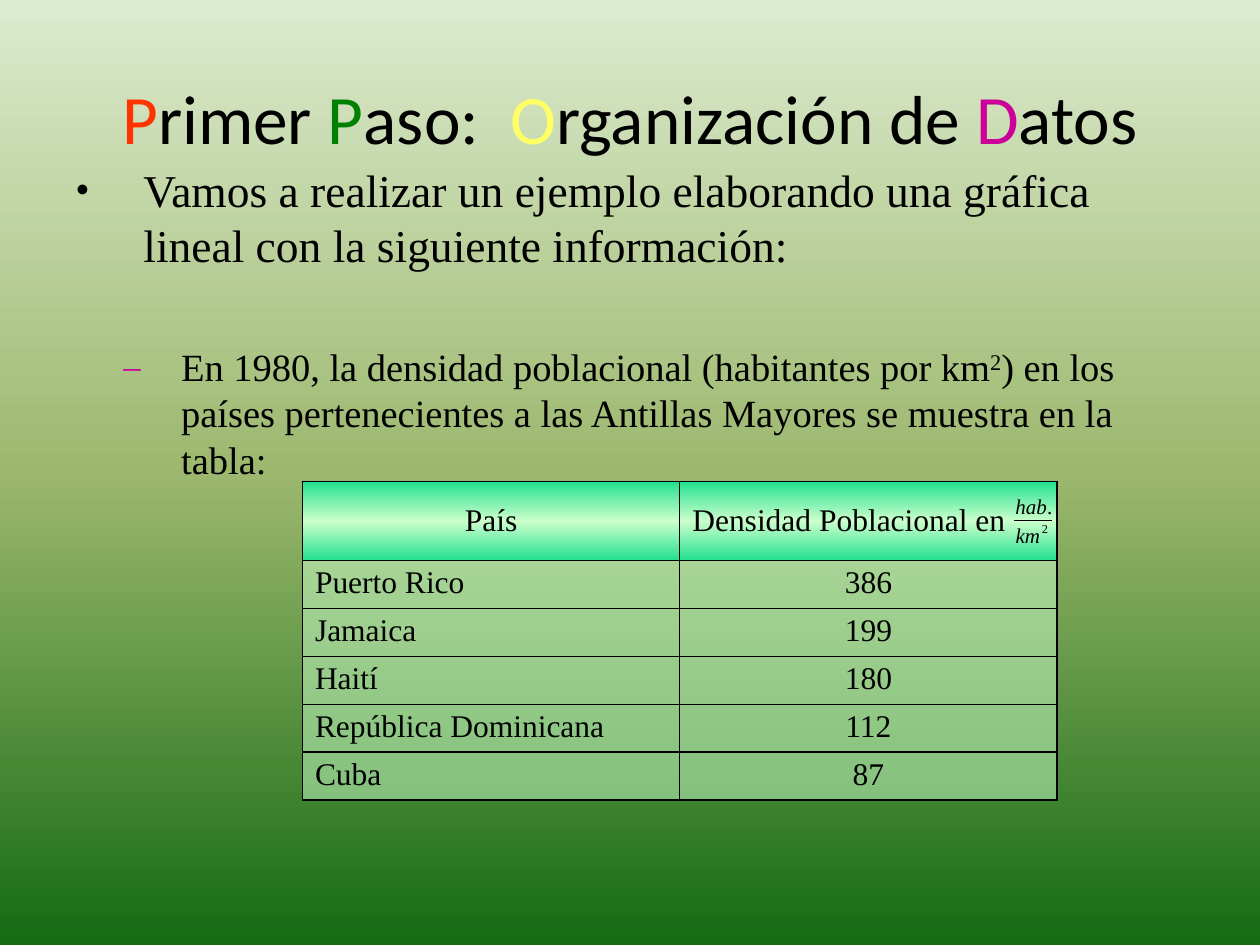
import pptx
import pptx.dml.color
import pptx.enum.shapes
import pptx.enum.text
import pptx.oxml
import pptx.oxml.ns
import pptx.util

COLORS = {
    "text": "000000", "red": "FF3300", "green": "008000", "yellow": "FFFF66",
    "magenta": "CC0099", "sky": "DDEBCF", "meadow": "9CB86E", "forest": "156B13",
    "header": "22E08F", "mint": "CCFFCC",
}
COLUMNS, ROWS = 100, 75
ALIGN = pptx.enum.text.PP_ALIGN
ANCHOR = pptx.enum.text.MSO_ANCHOR
BACKGROUND = [(0, "sky"), (50, "meadow"), (100, "forest")]
HEADER_FILL = [(0, "header"), (50, "mint"), (100, "header")]


def element(xml):
    """Parse one DrawingML element written without its namespace."""
    return pptx.oxml.parse_xml(f'<a:root {pptx.oxml.ns.nsdecls("a")}>{xml}</a:root>')[0]


def solid(color, alpha=100):
    return (f'<a:solidFill><a:srgbClr val="{COLORS[color]}">'
            f'<a:alpha val="{alpha * 1000}"/></a:srgbClr></a:solidFill>')


def vertical_gradient(stops):
    marks = "".join(f'<a:gs pos="{position * 1000}"><a:srgbClr val="{COLORS[color]}"/></a:gs>'
                    for position, color in stops)
    return (f'<a:gradFill rotWithShape="1"><a:gsLst>{marks}</a:gsLst>'
            '<a:lin ang="5400000" scaled="0"/></a:gradFill>')


def add_text(paragraph, text, size=18, color="text", font="Times New Roman",
             italic=False, baseline=0):
    run = paragraph.add_run()
    run.text = text
    run.font.name = font
    run.font.size = pptx.util.Pt(size)
    run.font.italic = italic
    run.font.color.rgb = pptx.dml.color.RGBColor.from_string(COLORS[color])
    if baseline:
        run.font._element.set("baseline", str(baseline * 1000))


def add_bullet(paragraph, mark, color, margin, hanging):
    """Indent the paragraph, in inches, and hang a bullet before it."""
    properties = paragraph._p.get_or_add_pPr()
    properties.set("marL", str(pptx.util.Inches(margin)))
    properties.set("indent", str(-pptx.util.Inches(hanging)))
    for xml in (f'<a:buClr><a:srgbClr val="{COLORS[color]}"/></a:buClr>',
                '<a:buSzPct val="90000"/>',
                '<a:buFont typeface="Times New Roman"/>',
                f'<a:buChar char="{mark}"/>'):
        properties.append(element(xml))


class SlideBuilder:
    """Draws on one slide; places are columns and rows of a 100 by 75 grid."""

    def __init__(self, presentation):
        self.width, self.height = presentation.slide_width, presentation.slide_height
        self.slide = presentation.slides.add_slide(presentation.slide_layouts[6])

    def place(self, column, row):
        return round(self.width * column / COLUMNS), round(self.height * row / ROWS)

    def background(self, stops):
        self.slide.background.fill.solid()
        properties = self.slide.background._cSld.bg.bgPr
        properties.replace(properties[0], element(vertical_gradient(stops)))

    def text_box(self, column, row, columns, rows, anchor=ANCHOR.TOP):
        shape = self.slide.shapes.add_textbox(*self.place(column, row), *self.place(columns, rows))
        frame = shape.text_frame
        frame.word_wrap = True
        frame.vertical_anchor = anchor
        return frame

    def label(self, column, row, columns, rows, text, **style):
        """Tight one-line text without margins."""
        frame = self.text_box(column, row, columns, rows)
        frame.word_wrap = False
        frame.margin_left = frame.margin_right = frame.margin_top = frame.margin_bottom = 0
        add_text(frame.paragraphs[0], text, **style)

    def line(self, start, end, width):
        connector = self.slide.shapes.add_connector(
            pptx.enum.shapes.MSO_CONNECTOR.STRAIGHT, *self.place(*start), *self.place(*end))
        connector.line.width = pptx.util.Pt(width)
        connector.line.color.rgb = pptx.dml.color.RGBColor.from_string(COLORS["text"])
        connector._element.spPr.append(element("<a:effectLst/>"))

    def cell(self, cell, text, fill, align, anchor=ANCHOR.TOP):
        cell.margin_top = cell.margin_bottom = pptx.util.Inches(0.04)
        cell.vertical_anchor = anchor
        paragraph = cell.text_frame.paragraphs[0]
        paragraph.alignment = align
        add_text(paragraph, text)
        properties = cell._tc.get_or_add_tcPr()
        for side in "LRTB":
            properties.append(element(f'<a:ln{side} w="12700">{solid("text")}</a:ln{side}>'))
        properties.append(element(fill))

    def table(self, column, row, columns, header, records, header_rows, record_rows):
        total_rows = header_rows + record_rows * len(records)
        table = self.slide.shapes.add_table(
            len(records) + 1, len(header), *self.place(column, row),
            *self.place(columns, total_rows)).table
        table.first_row = table.horz_banding = False
        for index, table_row in enumerate(table.rows):
            table_row.height = self.place(0, record_rows if index else header_rows)[1]
        for index, (text, align) in enumerate(zip(header, (ALIGN.CENTER, ALIGN.LEFT))):
            self.cell(table.cell(0, index), text, vertical_gradient(HEADER_FILL),
                      align, ANCHOR.MIDDLE)
        for number, record in enumerate(records, 1):
            for index, (text, align) in enumerate(zip(record, (ALIGN.LEFT, ALIGN.CENTER))):
                self.cell(table.cell(number, index), text, solid("mint", 50), align)


def main():
    presentation = pptx.Presentation()
    presentation.slide_width = pptx.util.Inches(10)
    presentation.slide_height = pptx.util.Inches(7.5)
    builder = SlideBuilder(presentation)
    builder.background(BACKGROUND)

    title = builder.text_box(5, 3, 90, 12.5, ANCHOR.MIDDLE).paragraphs[0]
    title.alignment = ALIGN.CENTER
    for text, color in [("P", "red"), ("rimer ", "text"), ("P", "green"), ("aso:  ", "text"),
                        ("O", "yellow"), ("rganización de ", "text"),
                        ("D", "magenta"), ("atos", "text")]:
        add_text(title, text, size=39.6, color=color, font="Calibri")

    body = builder.text_box(5, 12.4, 90.7, 26.7)
    task, detail = body.paragraphs[0], body.add_paragraph()
    detail.space_before = pptx.util.Pt(41)
    add_bullet(task, "•", "text", 0.54, 0.54)
    add_bullet(detail, "–", "magenta", 0.84, 0.46)
    add_text(task, "Vamos a realizar un ejemplo elaborando una gráfica lineal "
                   "con la siguiente información:", size=26)
    add_text(detail, "En 1980, la densidad poblacional (habitantes por km", size=22)
    add_text(detail, "2", size=22, baseline=30)
    add_text(detail, ") en los países pertenecientes a las Antillas Mayores "
                     "se muestra en la tabla:", size=22)

    builder.table(24, 38.2, 59.9, ("País", "Densidad Poblacional en"),
                  [("Puerto Rico", "386"), ("Jamaica", "199"), ("Haití", "180"),
                   ("República Dominicana", "112"), ("Cuba", "87")],
                  header_rows=6.3, record_rows=3.77)

    builder.line((80.5, 41.3), (83.5, 41.3), 0.5)
    builder.label(80.6, 39.2, 2.6, 2, "hab", size=12, italic=True)
    builder.label(83.1, 39.2, 0.5, 2, ".", size=12)
    builder.label(80.6, 41.5, 2.1, 2, "km", size=12, italic=True)
    builder.label(82.7, 41.4, 0.6, 1.2, "2", size=7)

    presentation.save("out.pptx")


if __name__ == "__main__":
    main()
